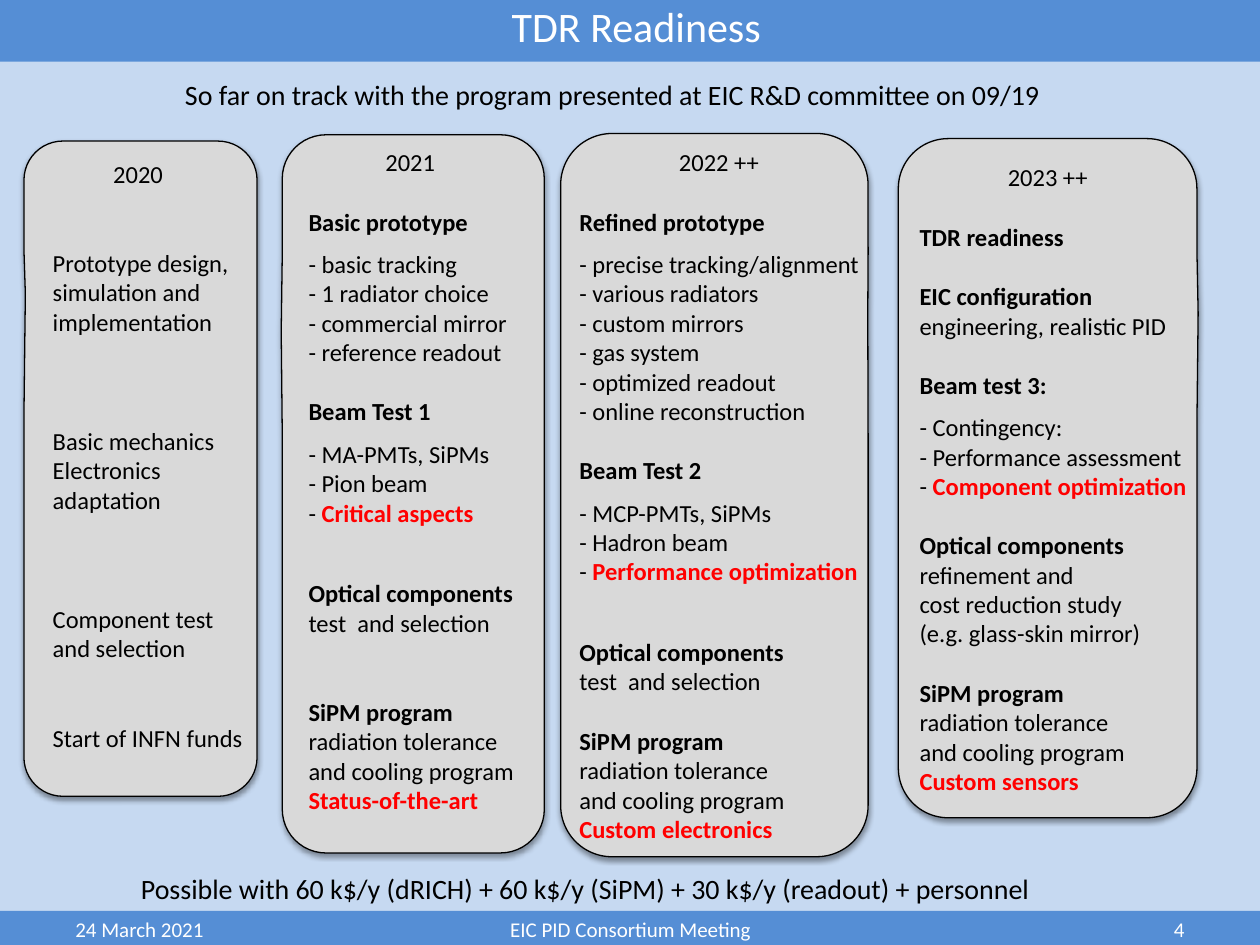
from lxml.etree import SubElement
from pptx import Presentation
from pptx.dml.color import RGBColor
from pptx.enum.shapes import MSO_SHAPE
from pptx.enum.text import MSO_ANCHOR, PP_ALIGN
from pptx.oxml.ns import qn
from pptx.util import Inches, Pt

LEFT, MID, RIGHT = PP_ALIGN.LEFT, PP_ALIGN.CENTER, PP_ALIGN.RIGHT
# Gaps between text groups, in points
SMALL, LINE, WIDE, TWO, THREE = 7.3, 17.1, 29.3, 34.2, 51.3


def tint(color, value):
    color.rgb = RGBColor.from_string(value)


def style(run, size, value="000000", bold=False):
    run.font.name = "Calibri"
    run.font.size = Pt(size)
    run.font.bold = bold
    tint(run.font.color, value)


prs = Presentation()
prs.slide_width, prs.slide_height = Inches(10), Inches(7.5)
slide = prs.slides.add_slide(prs.slide_layouts[5])
shapes = slide.shapes
slide.background.fill.solid()
tint(slide.background.fill.fore_color, "C6D9F1")

# Top and bottom bands
for top, high in [(0, 0.49), (7.23, 0.28)]:
    band = shapes.add_shape(MSO_SHAPE.RECTANGLE, 0, Inches(top), Inches(10), Inches(high))
    band.shadow.inherit = False
    band.fill.solid()
    tint(band.fill.fore_color, "558ED5")
    band.line.fill.background()

# Title, brought in front of the top band
title = shapes.title
title.left, title.top = Inches(3.95), Inches(-0.05)
title.width, title.height = Inches(2.2), Inches(0.5)
frame = title.text_frame
frame.text = "TDR Readiness"
frame.word_wrap = False
frame.vertical_anchor = MSO_ANCHOR.TOP
frame.paragraphs[0].alignment = MID
style(frame.paragraphs[0].runs[0], 24, "FFFFFF")
shapes._spTree.append(title._element)

# Year columns: card place, pointer, text place, year indent, lines
# A number is a gap, "*" starts a bold line, "!" starts bold red text
columns = [
    ((0.19, 1.12, 1.85, 5.2), (-0.494, -0.267), (0.32, 1.21, 1.72, 4.81), 0.48, [
        "2020", TWO,
        "Prototype design,", "simulation and", "implementation", THREE,
        "Basic mechanics", "Electronics", "adaptation", THREE,
        "Component test", "and selection", TWO,
        "Start of INFN funds"]),
    ((2.24, 1.07, 2.08, 5.7), (-0.504, -0.226), (2.35, 1.12, 1.88, 5.42), 0.61, [
        "2021", LINE,
        "*Basic prototype", SMALL,
        "- basic tracking", "- 1 radiator choice", "- commercial mirror",
        "- reference readout", LINE,
        "*Beam Test 1", SMALL,
        "- MA-PMTs, SiPMs", "- Pion beam", "- !Critical aspects", WIDE,
        "*Optical components", "test  and selection", TWO,
        "*SiPM program", "radiation tolerance", "and cooling program",
        "!Status-of-the-art"]),
    ((4.45, 1.06, 2.44, 5.74), (0.499, -0.25), (4.5, 1.12, 2.44, 5.89), 0.79, [
        "2022 ++", LINE,
        "*Refined prototype", SMALL,
        "- precise tracking/alignment", "- various radiators", "- custom mirrors",
        "- gas system", "- optimized readout", "- online reconstruction", LINE,
        "*Beam Test 2", SMALL,
        "- MCP-PMTs, SiPMs", "- Hadron beam", "- !Performance optimization", WIDE,
        "*Optical components", "test  and selection", LINE,
        "*SiPM program", "radiation tolerance", "and cooling program",
        "!Custom electronics"]),
    ((7.13, 1.1, 2.37, 5.39), (0.504, -0.243), (7.2, 1.24, 2.34, 5.39), 0.7, [
        "2023 ++", LINE,
        "*TDR readiness", LINE,
        "*EIC configuration", "engineering, realistic PID", LINE,
        "*Beam test 3:", SMALL,
        "- Contingency:", "- Performance assessment", "- !Component optimization", LINE,
        "*Optical components", "refinement and", "cost reduction study",
        "(e.g. glass-skin mirror)", LINE,
        "*SiPM program", "radiation tolerance", "and cooling program",
        "!Custom sensors"]),
]
for place, tip, area, indent, lines in columns:
    card = shapes.add_shape(MSO_SHAPE.ROUNDED_RECTANGULAR_CALLOUT, *map(Inches, place))
    for i, value in enumerate((*tip, 0.167)):
        card.adjustments[i] = value
    card.fill.solid()
    tint(card.fill.fore_color, "D9D9D9")
    tint(card.line.color, "000000")
    card.line.width = Pt(0.75)

    # Soft shadow below the card
    card.shadow.inherit = False
    effects = card._element.spPr.find(qn("a:effectLst"))
    shade = SubElement(effects, qn("a:outerShdw"), blurRad=str(Pt(3.1)),
                       dist=str(Pt(1.6)), dir="5400000", rotWithShape="0")
    black = SubElement(shade, qn("a:srgbClr"), val="000000")
    SubElement(black, qn("a:alpha"), val="38000")

    # Column text
    frame = shapes.add_textbox(*map(Inches, area)).text_frame
    frame.word_wrap = False
    para, gap = frame.paragraphs[0], 0
    para._p.get_or_add_pPr().set("marL", str(Inches(indent)))
    for line in lines:
        if not isinstance(line, str):
            gap = line
            continue
        if line != lines[0]:
            para = frame.add_paragraph()
        para.space_before = Pt(gap)
        gap = 0
        plain, _, red = line.partition("!")
        if plain:
            run = para.add_run()
            run.text = plain.lstrip("*")
            style(run, 14, bold=plain.startswith("*"))
        if red:
            run = para.add_run()
            run.text = red
            style(run, 14, "FF0000", True)

# Statements above and below the columns, then the footer
notes = [
    ("So far on track with the program presented at EIC R&D committee on 09/19",
     (1.37, 0.57, 7.13, 0.37), 16, "000000", LEFT),
    ("Possible with 60 k$/y (dRICH) + 60 k$/y (SiPM) + 30 k$/y (readout) + personnel",
     (1.02, 6.87, 7.35, 0.37), 16, "000000", LEFT),
    ("24 March 2021", (0.5, 7.23, 2.33, 0.28), 12, "FFFFFF", LEFT),
    ("EIC PID Consortium Meeting", (3.42, 7.23, 3.17, 0.28), 12, "FFFFFF", MID),
    ("4", (7.17, 7.23, 2.33, 0.28), 12, "FFFFFF", RIGHT),
]
for text, place, size, value, align in notes:
    frame = shapes.add_textbox(*map(Inches, place)).text_frame
    frame.text = text
    frame.word_wrap = size == 12
    frame.vertical_anchor = MSO_ANCHOR.MIDDLE if size == 12 else MSO_ANCHOR.TOP
    frame.paragraphs[0].alignment = align
    style(frame.paragraphs[0].runs[0], size, value)

prs.save("out.pptx")
